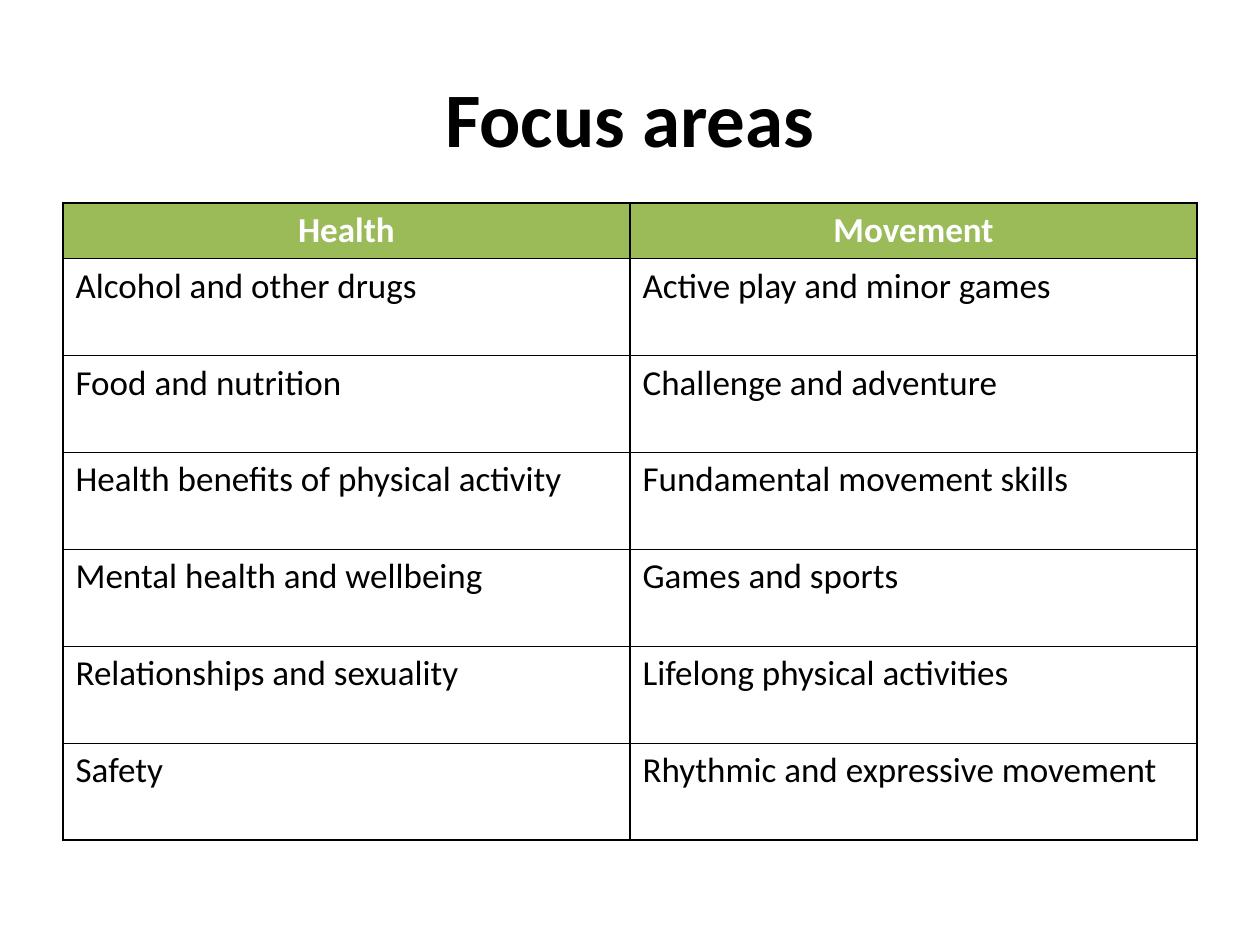
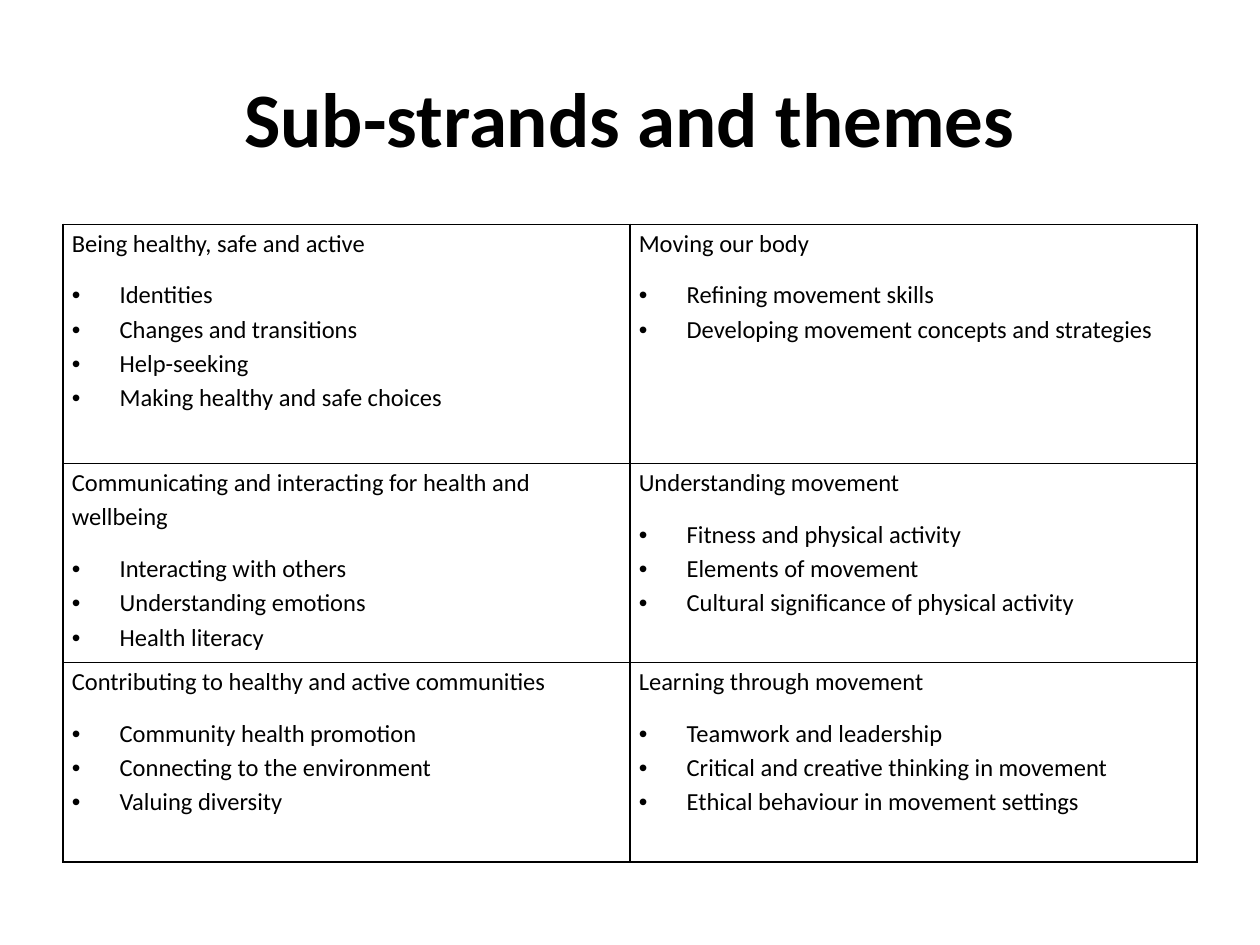
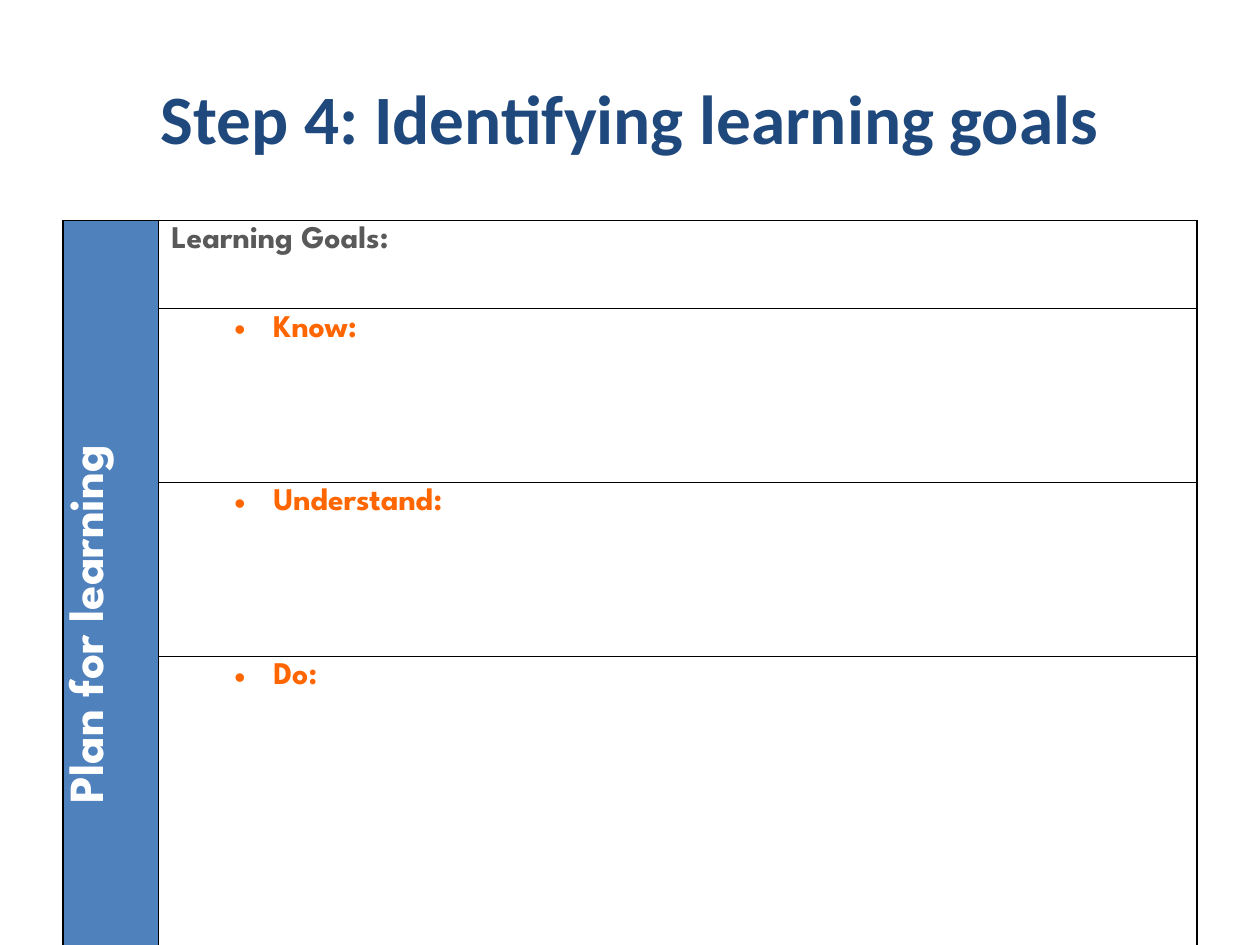
from lxml import etree
from pptx import Presentation
from pptx.dml.color import RGBColor
from pptx.enum import text
from pptx.oxml import ns
from pptx.util import Inches, Pt

BLACK = RGBColor(0x00, 0x00, 0x00)
WHITE = RGBColor(0xFF, 0xFF, 0xFF)
GREEN = RGBColor(0x9B, 0xBB, 0x59)
BLUE = RGBColor(0x4F, 0x81, 0xBD)
NAVY = RGBColor(0x1F, 0x49, 0x7D)
GREY = RGBColor(0x59, 0x59, 0x59)
ORANGE = RGBColor(0xFF, 0x66, 0x00)
BODY_FONT, PLAN_FONT = "Calibri", "League Spartan"
CENTER = text.PP_ALIGN.CENTER
LEFT, WIDTH = 0.5, 9

# Content
FOCUS_HEADINGS = ("Health", "Movement")
FOCUS_AREAS = [
    ("Alcohol and other drugs", "Active play and minor games"),
    ("Food and nutrition", "Challenge and adventure"),
    ("Health benefits of physical activity", "Fundamental movement skills"),
    ("Mental health and wellbeing", "Games and sports"),
    ("Relationships and sexuality", "Lifelong physical activities"),
    ("Safety", "Rhythmic and expressive movement"),
]
SUB_STRANDS = [
    [
        ("Being healthy, safe and active",
         ["Identities", "Changes and transitions", "Help-seeking",
          "Making healthy and safe choices"]),
        ("Moving our body",
         ["Refining movement skills",
          "Developing movement concepts and strategies"]),
    ],
    [
        ("Communicating and interacting for health and wellbeing",
         ["Interacting with others", "Understanding emotions",
          "Health literacy"]),
        ("Understanding movement",
         ["Fitness and physical activity", "Elements of movement",
          "Cultural significance of physical activity"]),
    ],
    [
        ("Contributing to healthy and active communities",
         ["Community health promotion", "Connecting to the environment",
          "Valuing diversity"]),
        ("Learning through movement",
         ["Teamwork and leadership",
          "Critical and creative thinking in movement",
          "Ethical behaviour in movement settings"]),
    ],
]
PLAN_LABEL = "Plan for learning"
GOALS_HEADING = "Learning Goals:"
GOALS = ["Know:", "Understand:", "Do:"]


# Shared parts
def write(paragraph, words, size, color=BLACK, bold=False, font=BODY_FONT, align=None):
    paragraph.text = words
    paragraph.alignment = align
    paragraph.font.size = Pt(size)
    paragraph.font.name = font
    paragraph.font.bold = bold
    paragraph.font.color.rgb = color


def add_bullet(paragraph, indent, hanging):
    props = paragraph._p.get_or_add_pPr()
    props.set("marL", str(Inches(indent)))
    props.set("indent", str(-Inches(hanging)))
    bullet_font = etree.Element(ns.qn("a:buFont"), typeface="Arial")
    bullet = etree.Element(ns.qn("a:buChar"), char="•")
    props.insert_element_before(bullet_font, "a:defRPr")
    props.insert_element_before(bullet, "a:defRPr")


def add_titled_slide(deck, title, size=44, color=BLACK):
    slide = deck.slides.add_slide(deck.slide_layouts[5])
    heading = slide.shapes.title
    heading.left, heading.top = Inches(LEFT), Inches(0.3)
    heading.width, heading.height = Inches(WIDTH), Inches(1.25)
    heading.text_frame.vertical_anchor = text.MSO_ANCHOR.MIDDLE
    write(heading.text_frame.paragraphs[0], title, size, color, True, align=CENTER)
    return slide


def add_ruled_table(slide, top, widths, heights):
    frame = slide.shapes.add_table(len(heights), len(widths), Inches(LEFT), Inches(top),
                                   Inches(WIDTH), Inches(sum(heights)))
    table = frame.table
    table.first_row = table.horz_banding = False
    table_props = table._tbl.tblPr
    table_props.remove(table_props.find(ns.qn("a:tableStyleId")))
    for column, width in zip(table.columns, widths):
        column.width = Inches(width)
    for row, height in zip(table.rows, heights):
        row.height = Inches(height)
    for cell in table.iter_cells():
        cell_props = cell._tc.get_or_add_tcPr()
        for side in ("lnL", "lnR", "lnT", "lnB"):
            line = etree.SubElement(cell_props, ns.qn("a:" + side), w=str(Pt(1)))
            fill = etree.SubElement(line, ns.qn("a:solidFill"))
            etree.SubElement(fill, ns.qn("a:srgbClr"), val=str(BLACK))
        cell.fill.background()
    return table


def fill_cell(cell, color):
    cell.fill.solid()
    cell.fill.fore_color.rgb = color


# Slides
def add_focus_areas(deck):
    slide = add_titled_slide(deck, "Focus areas")
    table = add_ruled_table(slide, 1.61, [WIDTH / 2] * 2, [0.41] + [0.77] * len(FOCUS_AREAS))
    for col, heading in enumerate(FOCUS_HEADINGS):
        cell = table.cell(0, col)
        fill_cell(cell, GREEN)
        write(cell.text_frame.paragraphs[0], heading, 20, WHITE, True, align=CENTER)
    for row, areas in enumerate(FOCUS_AREAS, 1):
        for col, area in enumerate(areas):
            write(table.cell(row, col).text_frame.paragraphs[0], area, 20)


def add_sub_strands(deck):
    slide = add_titled_slide(deck, "Sub-strands and themes")
    table = add_ruled_table(slide, 1.78, [WIDTH / 2] * 2, [1.9, 1.58, 1.58])
    for row, strands in enumerate(SUB_STRANDS):
        for col, (strand, themes) in enumerate(strands):
            cell = table.cell(row, col)
            cell.margin_left = cell.margin_right = Inches(0.07)
            cell.margin_top = cell.margin_bottom = 0
            heading = cell.text_frame.paragraphs[0]
            write(heading, strand, 14)
            heading.line_spacing = 1.15
            heading.space_before, heading.space_after = Pt(12), Pt(10)
            for theme in themes:
                item = cell.text_frame.add_paragraph()
                write(item, theme, 14)
                item.line_spacing = 1.15
                add_bullet(item, 0.38, 0.38)


def add_learning_goals(deck):
    slide = add_titled_slide(deck, "Step 4: Identifying learning goals", 39.6, NAVY)
    table = add_ruled_table(slide, 1.75, [0.76, 8.24], [0.7] + [1.38] * len(GOALS))
    plan = table.cell(0, 0)
    plan.merge(table.cell(len(GOALS), 0))
    fill_cell(plan, BLUE)
    plan._tc.get_or_add_tcPr().set("vert", "vert270")
    write(plan.text_frame.paragraphs[0], PLAN_LABEL, 28, WHITE, True, PLAN_FONT, CENTER)
    write(table.cell(0, 1).text_frame.paragraphs[0], GOALS_HEADING, 18, GREY, True, PLAN_FONT)
    for row, goal in enumerate(GOALS, 1):
        item = table.cell(row, 1).text_frame.paragraphs[0]
        write(item, goal, 18, ORANGE, True, PLAN_FONT)
        item.level = 1
        add_bullet(item, 0.81, 0.31)


def main():
    deck = Presentation()
    deck.slide_width, deck.slide_height = Inches(10), Inches(7.5)
    add_focus_areas(deck)
    add_sub_strands(deck)
    add_learning_goals(deck)
    deck.save("out.pptx")


if __name__ == "__main__":
    main()
